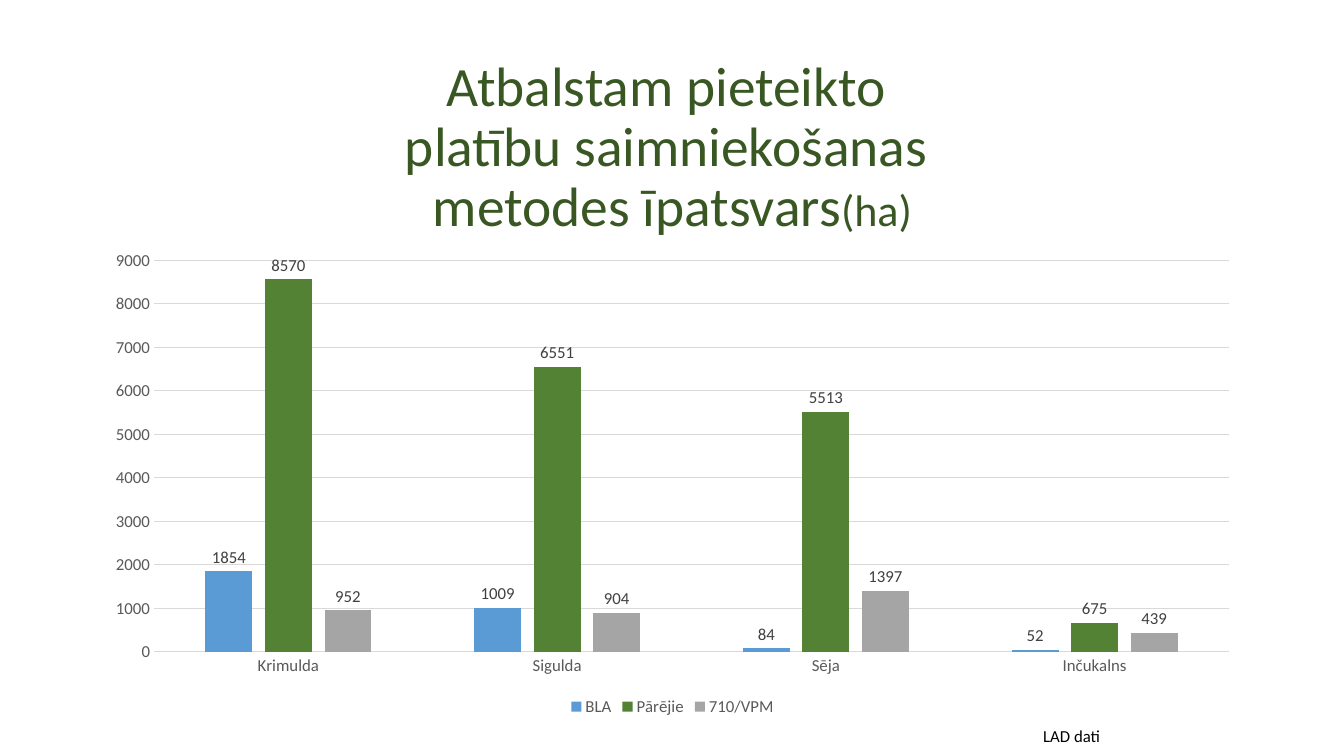
from typing import NamedTuple

from pptx import Presentation
from pptx.chart.data import CategoryChartData
from pptx.dml.color import RGBColor
from pptx.enum.chart import XL_CHART_TYPE, XL_LABEL_POSITION, XL_LEGEND_POSITION, XL_TICK_MARK
from pptx.enum.text import MSO_ANCHOR, PP_ALIGN
from pptx.util import Inches, Pt

COLUMN = XL_CHART_TYPE.COLUMN_CLUSTERED
OUTSIDE_END = XL_LABEL_POSITION.OUTSIDE_END
LEGEND_BOTTOM = XL_LEGEND_POSITION.BOTTOM
NO_TICK = XL_TICK_MARK.NONE
MIDDLE = MSO_ANCHOR.MIDDLE
CENTER, RIGHT = PP_ALIGN.CENTER, PP_ALIGN.RIGHT

BLACK = RGBColor(0x00, 0x00, 0x00)
DARK_GREEN = RGBColor(0x38, 0x57, 0x23)
GREEN = RGBColor(0x54, 0x82, 0x35)
BLUE = RGBColor(0x5B, 0x9B, 0xD5)
GREY = RGBColor(0xA5, 0xA5, 0xA5)
LABEL_GREY = RGBColor(0x40, 0x40, 0x40)
AXIS_GREY = RGBColor(0x59, 0x59, 0x59)
LINE_GREY = RGBColor(0xD9, 0xD9, 0xD9)
FONT = "Calibri"


class Run(NamedTuple):
    text: str
    size: float
    color: RGBColor


class TextBox(NamedTuple):
    left: float
    top: float
    width: float
    height: float
    align: PP_ALIGN
    line_spacing: float
    runs: list[Run]


class Series(NamedTuple):
    name: str
    values: tuple[int, ...]
    color: RGBColor


TEXT_BOXES = [
    TextBox(0.92, 0.75, 11.5, 1.45, CENTER, 0.9, [
        Run("Atbalstam pieteikto \nplatību saimniekošanas \nmetodes īpatsvars", 39.6, DARK_GREEN),
        Run("(ha)", 31.5, DARK_GREEN),
    ]),
    TextBox(8.01, 7.1, 3, 0.4, RIGHT, 1.0, [Run("LAD dati", 12, BLACK)]),
]
PARISHES = ["Krimulda", "Sigulda", "Sēja", "Inčukalns"]
SERIES = [
    Series("BLA", (1854, 1009, 84, 52), BLUE),
    Series("Pārējie", (8570, 6551, 5513, 675), GREEN),
    Series("710/VPM", (952, 904, 1397, 439), GREY),
]


def set_attrs(obj, values: dict) -> None:
    for name, value in values.items():
        setattr(obj, name, value)


def set_font(font, size: float, color: RGBColor) -> None:
    set_attrs(font, {"name": FONT, "size": Pt(size), "bold": False})
    font.color.rgb = color


def set_line(line) -> None:
    line.color.rgb = LINE_GREY
    line.width = Pt(0.75)


def add_text(slide, box: TextBox) -> None:
    sp = slide.shapes.add_textbox(*map(Inches, box[:4]))
    tf = sp.text_frame
    set_attrs(tf, {"word_wrap": True, "vertical_anchor": MIDDLE})
    p = tf.paragraphs[0]
    set_attrs(p, {"alignment": box.align, "line_spacing": box.line_spacing})
    for run in box.runs:
        for i, text in enumerate(run.text.split("\n")):
            if i:
                p.add_line_break()
            r = p.add_run()
            r.text = text
            set_font(r.font, run.size, run.color)


def add_area_chart(slide) -> None:
    data = CategoryChartData()
    data.categories = PARISHES
    for series in SERIES:
        data.add_series(series.name, series.values)
    frame = slide.shapes.add_chart(
        COLUMN, Inches(0.92), Inches(2.39), Inches(11.5), Inches(4.76), data)
    chart = frame.chart
    set_attrs(chart, {"has_title": False, "has_legend": True})
    set_font(chart.font, 10, BLACK)
    set_attrs(chart.legend, {"position": LEGEND_BOTTOM, "include_in_layout": False})
    set_font(chart.legend.font, 12, AXIS_GREY)

    for axis in (chart.category_axis, chart.value_axis):
        set_attrs(axis, {"major_tick_mark": NO_TICK, "minor_tick_mark": NO_TICK})
        set_font(axis.tick_labels.font, 12, AXIS_GREY)
    set_line(chart.category_axis.format.line)
    set_attrs(chart.value_axis, {
        "minimum_scale": 0, "maximum_scale": 9000, "major_unit": 1000,
        "has_major_gridlines": True})
    set_line(chart.value_axis.major_gridlines.format.line)
    chart.value_axis.format.line.fill.background()

    plot = chart.plots[0]
    set_attrs(plot, {"gap_width": 219, "overlap": -27, "vary_by_categories": False})
    for series, bars in zip(SERIES, plot.series):
        bars.format.fill.solid()
        bars.format.fill.fore_color.rgb = series.color
        labels = bars.data_labels
        set_attrs(labels, {"show_value": True, "position": OUTSIDE_END})
        set_font(labels.font, 12, LABEL_GREY)


def main() -> None:
    prs = Presentation()
    set_attrs(prs, {"slide_width": Inches(13.33), "slide_height": Inches(7.5)})
    slide = prs.slides.add_slide(prs.slide_layouts[6])
    title, source_note = TEXT_BOXES
    add_text(slide, title)
    add_area_chart(slide)
    add_text(slide, source_note)
    prs.save("out.pptx")


if __name__ == "__main__":
    main()
